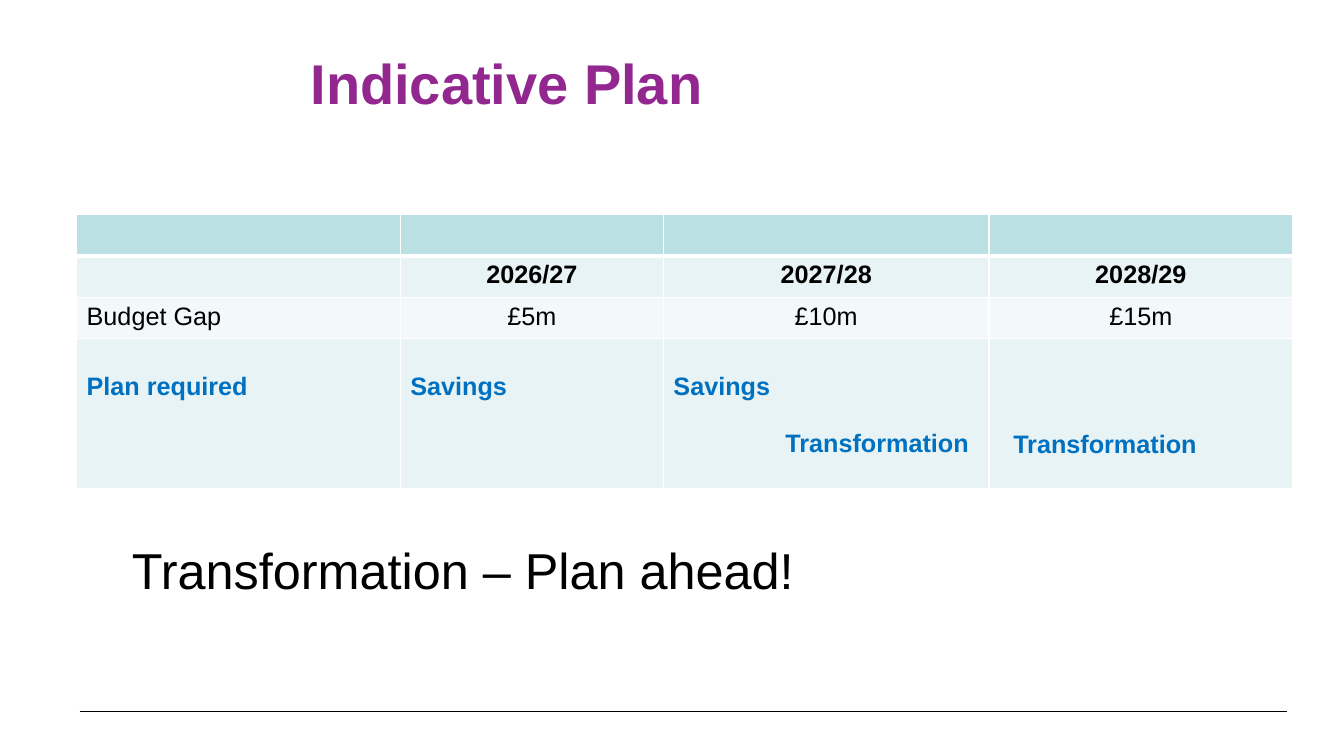
from lxml import etree
from pptx import Presentation
from pptx.dml.color import RGBColor
from pptx.enum.shapes import MSO_CONNECTOR
from pptx.enum.text import MSO_ANCHOR, PP_ALIGN
from pptx.oxml.ns import qn
from pptx.util import Inches, Pt

STRAIGHT = MSO_CONNECTOR.STRAIGHT
MIDDLE = MSO_ANCHOR.MIDDLE
LEFT, CENTER = PP_ALIGN.LEFT, PP_ALIGN.CENTER

PURPLE = RGBColor(0x91, 0x27, 0x8F)
BLACK = RGBColor(0, 0, 0)
WHITE = RGBColor(0xFF, 0xFF, 0xFF)
BLUE = RGBColor(0x00, 0x70, 0xC0)
TEAL = RGBColor(0xBB, 0xE0, 0xE3)
PALE = RGBColor(0xE7, 0xF3, 0xF4)
PALEST = RGBColor(0xF3, 0xF9, 0xFA)

COLUMN_WIDTHS = (3.21, 2.61, 3.23, 3.01)
ROW_HEIGHTS = (0.41, 0.41, 0.41, 1.49)
ROW_FILLS = (TEAL, PALE, PALEST, PALE)
ROWS = (
    ("", "", "", ""),
    ("", "2026/27", "2027/28", "2028/29"),
    ("Budget Gap", "£5m", "£10m", "£15m"),
    ("Plan required", "Savings", "Savings\nTransformation", "Transformation"),
)
YEARS_ROW, PLAN_ROW = 1, 3
LINE_POINTS = 20.7
PLAN_TOPS = (0.34, 0.34, 0.34, 0.91)
TRANSFORMATION_INDENTS = {2: 1.11, 3: 0.14}


def style_paragraph(paragraph, size, color, bold=False, align=LEFT):
    """Set the alignment and font of a paragraph and its runs."""
    paragraph.alignment = align
    for part in (paragraph, *paragraph.runs):
        part.font.name = "Arial"
        part.font.size = Pt(size)
        part.font.bold = bold
        part.font.color.rgb = color


def add_title(slide):
    """Place and format the slide title."""
    title = slide.shapes.title
    title.left, title.top = Inches(2.98), Inches(0.5)
    title.width, title.height = Inches(6.41), Inches(0.63)
    title.text_frame.text = "Indicative Plan"
    title.text_frame.vertical_anchor = MIDDLE
    style_paragraph(title.text_frame.paragraphs[0], 40, PURPLE, bold=True)


def add_footer_rule(slide):
    """Draw the thin rule at the foot of the slide."""
    rule = slide.shapes.add_connector(
        STRAIGHT, Inches(0.79), Inches(7.06), Inches(12.76), Inches(7.06))
    rule.line.color.rgb = BLACK
    rule.line.width = Pt(0.75)
    etree.SubElement(rule._element.spPr, qn("a:effectLst"))


def add_borders(cell, row):
    """Give a cell white borders, heavier under the header row."""
    widths = {"L": 1, "R": 1, "T": 3 if row == 1 else 1, "B": 3 if row == 0 else 1}
    properties = cell._tc.get_or_add_tcPr()
    for side, points in widths.items():
        border = etree.SubElement(properties, qn(f"a:ln{side}"), w=str(Pt(points)))
        fill = etree.SubElement(border, qn("a:solidFill"))
        etree.SubElement(fill, qn("a:srgbClr"), val=str(WHITE))


def fill_cell(cell, row, column):
    """Write and format one cell of the plan table."""
    add_borders(cell, row)
    cell.fill.solid()
    cell.fill.fore_color.rgb = ROW_FILLS[row]
    cell.text_frame.text = ROWS[row][column]
    is_plan = row == PLAN_ROW
    if is_plan:
        cell.margin_top = Inches(PLAN_TOPS[column])
    align = LEFT if column == 0 or is_plan else CENTER
    for index, paragraph in enumerate(cell.text_frame.paragraphs):
        if paragraph.text == "Transformation":
            indent = Inches(TRANSFORMATION_INDENTS[column])
            paragraph._p.get_or_add_pPr().set("marL", str(indent))
        if index:
            paragraph.space_before = Pt(LINE_POINTS)
        style_paragraph(paragraph, 18, BLUE if is_plan else BLACK,
                        bold=row in (YEARS_ROW, PLAN_ROW), align=align)


def add_plan_table(slide):
    """Add the table of budget gaps and plans by year."""
    plan = slide.shapes.add_table(
        len(ROWS), len(COLUMN_WIDTHS), Inches(0.76), Inches(2.13),
        Inches(sum(COLUMN_WIDTHS)), Inches(sum(ROW_HEIGHTS))).table
    for column, width in zip(plan.columns, COLUMN_WIDTHS):
        column.width = Inches(width)
    for row, height in enumerate(ROW_HEIGHTS):
        plan.rows[row].height = Inches(height)
        for column in range(len(COLUMN_WIDTHS)):
            fill_cell(plan.cell(row, column), row, column)


def add_message(slide):
    """Add the closing message below the table."""
    message = slide.shapes.add_textbox(
        Inches(1.21), Inches(5.25), Inches(11.57), Inches(1.46)).text_frame
    message.word_wrap = True
    message.margin_top = Inches(0.1)
    message.text = "Transformation – Plan ahead!"
    style_paragraph(message.paragraphs[0], 36, BLACK)


def main():
    """Build the slide and save it."""
    presentation = Presentation()
    presentation.slide_width = Inches(13.33)
    presentation.slide_height = Inches(7.5)
    slide = presentation.slides.add_slide(presentation.slide_layouts[5])
    add_footer_rule(slide)
    add_title(slide)
    add_plan_table(slide)
    add_message(slide)
    presentation.save("out.pptx")


if __name__ == "__main__":
    main()
